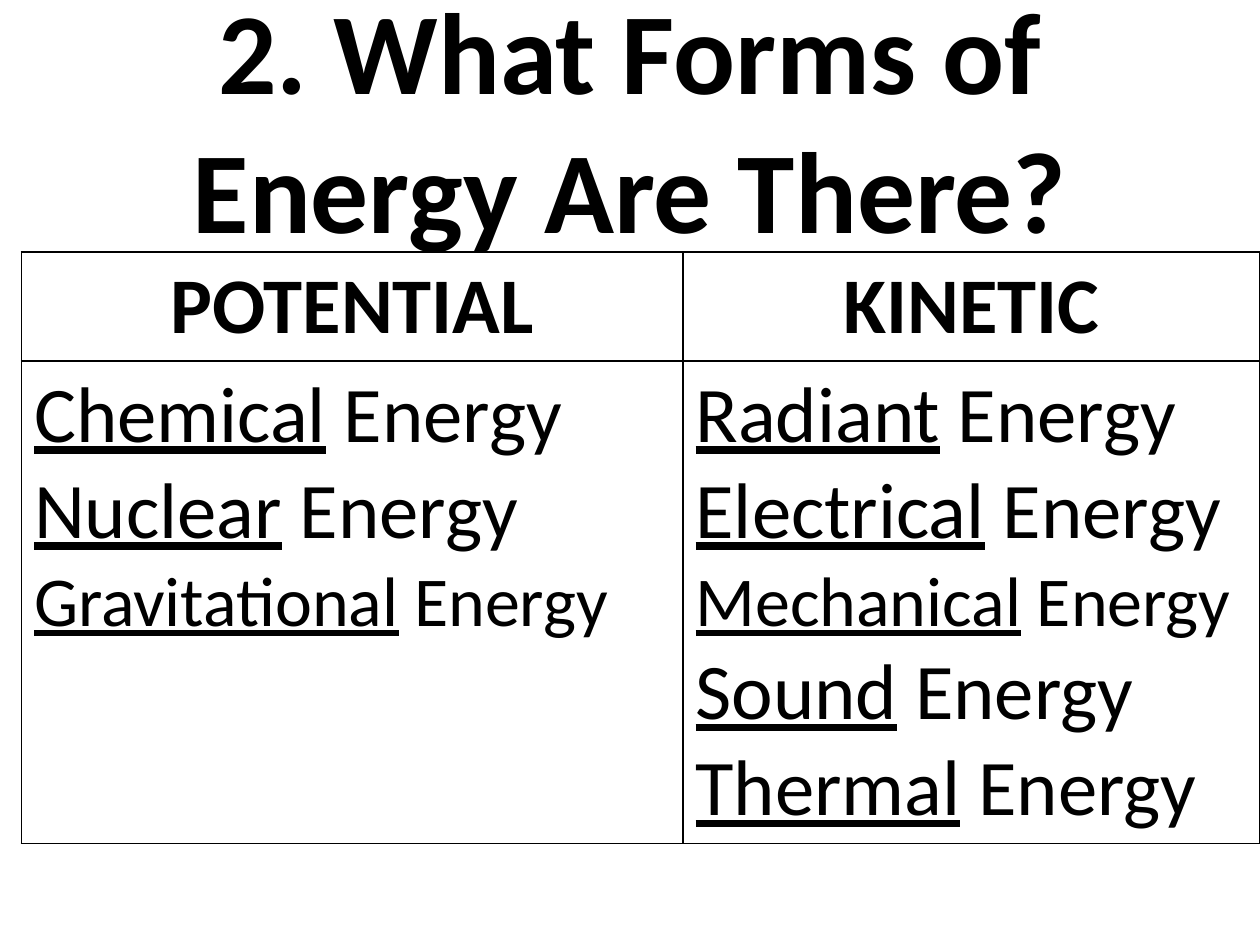
from dataclasses import dataclass

from lxml.etree import SubElement
from pptx import Presentation
from pptx.dml.color import RGBColor
from pptx.enum.text import MSO_ANCHOR as Anchor, MSO_AUTO_SIZE as AutoSize, PP_ALIGN as Align
from pptx.oxml.ns import qn
from pptx.slide import Slide
from pptx.util import Inches, Pt

ENERGY_FORMS = {
    "POTENTIAL": ["Chemical", "Nuclear", "Gravitational"],
    "KINETIC": ["Radiant", "Electrical", "Mechanical", "Sound", "Thermal"],
}
SMALLER_FORMS = {"Gravitational", "Mechanical"}


def colour(hex_code):
    """Turn a hex string into a colour."""
    return RGBColor.from_string(hex_code)


@dataclass
class EnergySlide:
    """Hold the style and the current slide, and draw its elements."""

    slide: Slide
    width: int
    height: int
    typeface: str = "Calibri"
    ink: str = "000000"
    heading_size: int = 66
    entry_size: int = 45
    small_size: int = 40

    def box(self, left, top, width, height):
        """Turn shares of the slide's size into lengths."""
        return (int(left * self.width), int(top * self.height),
                int(width * self.width), int(height * self.height))

    def style(self, paragraph, size, bold=False, align=Align.LEFT):
        """Set the font and alignment of a paragraph."""
        paragraph.alignment = align
        font = paragraph.font
        font.name, font.size, font.bold = self.typeface, Pt(size), bold
        font.color.rgb = colour(self.ink)

    def title(self, wording, place):
        """Place and format the title placeholder."""
        heading = self.slide.shapes.title
        heading.left, heading.top, heading.width, heading.height = self.box(*place)
        frame = heading.text_frame
        frame.text = wording
        frame.word_wrap, frame.auto_size = True, AutoSize.NONE
        frame.vertical_anchor = Anchor.MIDDLE
        self.style(frame.paragraphs[0], self.heading_size, True, Align.CENTER)

    def outline(self, cell):
        """Clear a cell's fill and draw its four borders."""
        properties = cell._tc.get_or_add_tcPr()
        for side in ("lnL", "lnR", "lnT", "lnB"):
            border = SubElement(properties, qn(f"a:{side}"), w=str(Pt(1)))
            fill = SubElement(border, qn("a:solidFill"))
            SubElement(fill, qn("a:srgbClr"), val=self.ink)
        cell.fill.background()

    def entries(self, cell, forms):
        """List forms of energy with their kind underlined."""
        frame = cell.text_frame
        for index, form in enumerate(forms):
            entry = frame.add_paragraph() if index else frame.paragraphs[0]
            kind = entry.add_run()
            kind.text, kind.font.underline = form, True
            entry.add_run().text = " Energy"
            self.style(entry, self.small_size if form in SMALLER_FORMS else self.entry_size)

    def table(self, groups, place, column_shares, row_shares):
        """Draw one column for each group, with its heading on top."""
        left, top, width, height = self.box(*place)
        grid = self.slide.shapes.add_table(2, len(groups), left, top, width, height).table
        grid.first_row = grid.horz_banding = False
        for row, share in zip(grid.rows, row_shares):
            row.height = int(height * share)
        for index, (group, forms) in enumerate(groups.items()):
            grid.columns[index].width = int(width * column_shares[index])
            header, body = grid.cell(0, index), grid.cell(1, index)
            header.text = group
            self.style(header.text_frame.paragraphs[0], self.entry_size, True, Align.CENTER)
            self.entries(body, forms)
            for cell in (header, body):
                self.outline(cell)


def main():
    """Build and save the slide."""
    deck = Presentation()
    deck.slide_width, deck.slide_height = Inches(10), Inches(7.5)
    page = EnergySlide(deck.slides.add_slide(deck.slide_layouts[5]),
                       deck.slide_width, deck.slide_height)
    page.title("2. What Forms of Energy Are There?", (0.05, 0.04, 0.9, 0.17))
    page.table(ENERGY_FORMS, (0.017, 2 / 7.5, 0.983, 4.62 / 7.5),
               (5.25 / 9.83, 4.58 / 9.83), (0.18, 0.82))
    deck.save("out.pptx")


if __name__ == "__main__":
    main()
